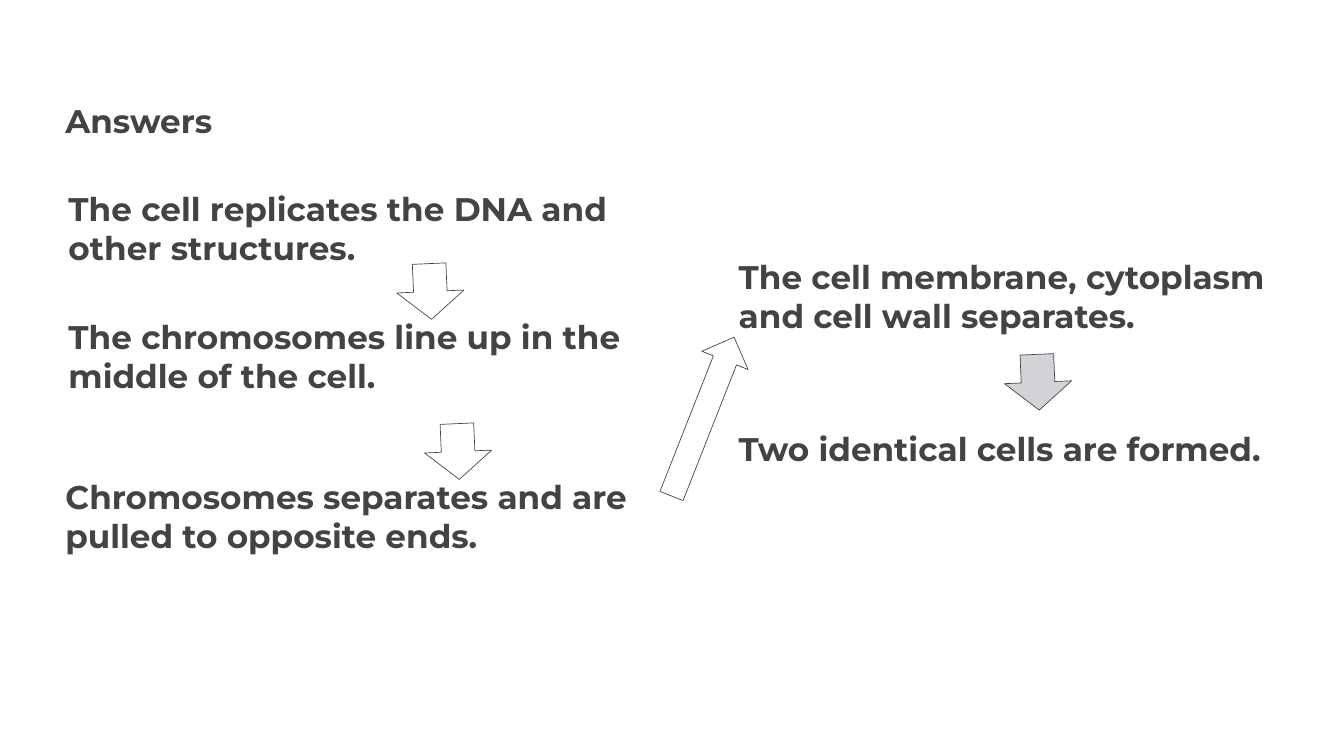
from dataclasses import dataclass

from pptx import Presentation
from pptx import util as u
from pptx.dml.color import RGBColor
from pptx.enum import shapes, text

WHITE = RGBColor(0xFF, 0xFF, 0xFF)
CHARCOAL = RGBColor(0x43, 0x43, 0x43)
SILVER = RGBColor(0xD2, 0xD2, 0xD7)

LEFT_COLUMN, RIGHT_COLUMN = 2.08, 27.41
TITLE_LEFT = 1.96
LEFT_WIDTH, RIGHT_WIDTH = 23.42, 23.16
STEP_HEIGHT = 3.45
DOWN = 87.5
UP_RIGHT = 291.5

FONT_FORMAT = {"name": "Montserrat", "size": u.Pt(35), "bold": True}
FRAME_FORMAT = {
    "margin_left": u.Cm(0.51),
    "margin_right": u.Cm(0.51),
    "margin_top": u.Cm(0.25),
    "margin_bottom": u.Cm(0.25),
    "word_wrap": True,
    "auto_size": text.MSO_AUTO_SIZE.NONE,
    "vertical_anchor": text.MSO_ANCHOR.TOP,
}


@dataclass(frozen=True)
class Step:
    words: str
    left: float
    top: float
    width: float
    height: float = STEP_HEIGHT


@dataclass(frozen=True)
class Arrow:
    left: float
    top: float
    width: float = 2.11
    height: float = 2.54
    rotation: float = DOWN
    fill: RGBColor = WHITE


TITLE = Step("Answers", TITLE_LEFT, 3.56, 25.4, 2.21)

STEPS = [
    Step("Two identical cells are formed.", RIGHT_COLUMN, 15.95, RIGHT_WIDTH),
    Step("The chromosomes line up in the middle of the cell.",
         LEFT_COLUMN, 11.71, LEFT_WIDTH, 4.78),
    Step("The cell membrane, cytoplasm and cell wall separates.",
         RIGHT_COLUMN, 9.45, RIGHT_WIDTH),
    Step("The cell replicates the DNA and other structures.",
         LEFT_COLUMN, 6.88, LEFT_WIDTH),
    Step("Chromosomes separates and are pulled to opposite ends.",
         TITLE_LEFT, 17.78, LEFT_WIDTH),
]

ARROWS = [
    Arrow(15.21, 9.75),
    Arrow(16.26, 15.8),
    Arrow(23.34, 14.81, 6.45, 1.88, UP_RIGHT),
    Arrow(38.18, 13.18, fill=SILVER),
]


def apply_format(target, values: dict) -> None:
    for name, value in values.items():
        setattr(target, name, value)


def bounds(item: Step | Arrow) -> dict:
    return {side: u.Cm(getattr(item, side))
            for side in ("left", "top", "width", "height")}


def paint(shape, fill: RGBColor, line: RGBColor) -> None:
    shape.fill.solid()
    shape.fill.fore_color.rgb = fill
    shape.line.color.rgb = line
    shape.line.width = u.Pt(0.75)


def write_step(box, step: Step) -> None:
    paint(box, WHITE, WHITE)
    frame = box.text_frame
    apply_format(frame, FRAME_FORMAT)
    para = frame.paragraphs[0]
    para.alignment = text.PP_ALIGN.LEFT
    span = para.add_run()
    span.text = step.words
    apply_format(span.font, FONT_FORMAT)
    span.font.color.rgb = CHARCOAL


def add_title(page, step: Step) -> None:
    box = page.shapes.title
    apply_format(box, bounds(step))
    write_step(box, step)


def add_step(page, step: Step) -> None:
    box = page.shapes.add_shape(shapes.MSO_SHAPE.RECTANGLE, **bounds(step))
    box.shadow.inherit = False
    write_step(box, step)


def add_arrow(page, arrow: Arrow) -> None:
    shape = page.shapes.add_shape(shapes.MSO_SHAPE.RIGHT_ARROW, **bounds(arrow))
    shape.shadow.inherit = False
    shape.rotation = arrow.rotation
    paint(shape, arrow.fill, CHARCOAL)


def main() -> None:
    deck = Presentation()
    deck.slide_width = u.Cm(50.8)
    deck.slide_height = u.Cm(28.58)
    page = deck.slides.add_slide(deck.slide_layouts.get_by_name("Title Only"))
    add_title(page, TITLE)
    for step in STEPS:
        add_step(page, step)
    for arrow in ARROWS:
        add_arrow(page, arrow)
    deck.save("out.pptx")


if __name__ == "__main__":
    main()
